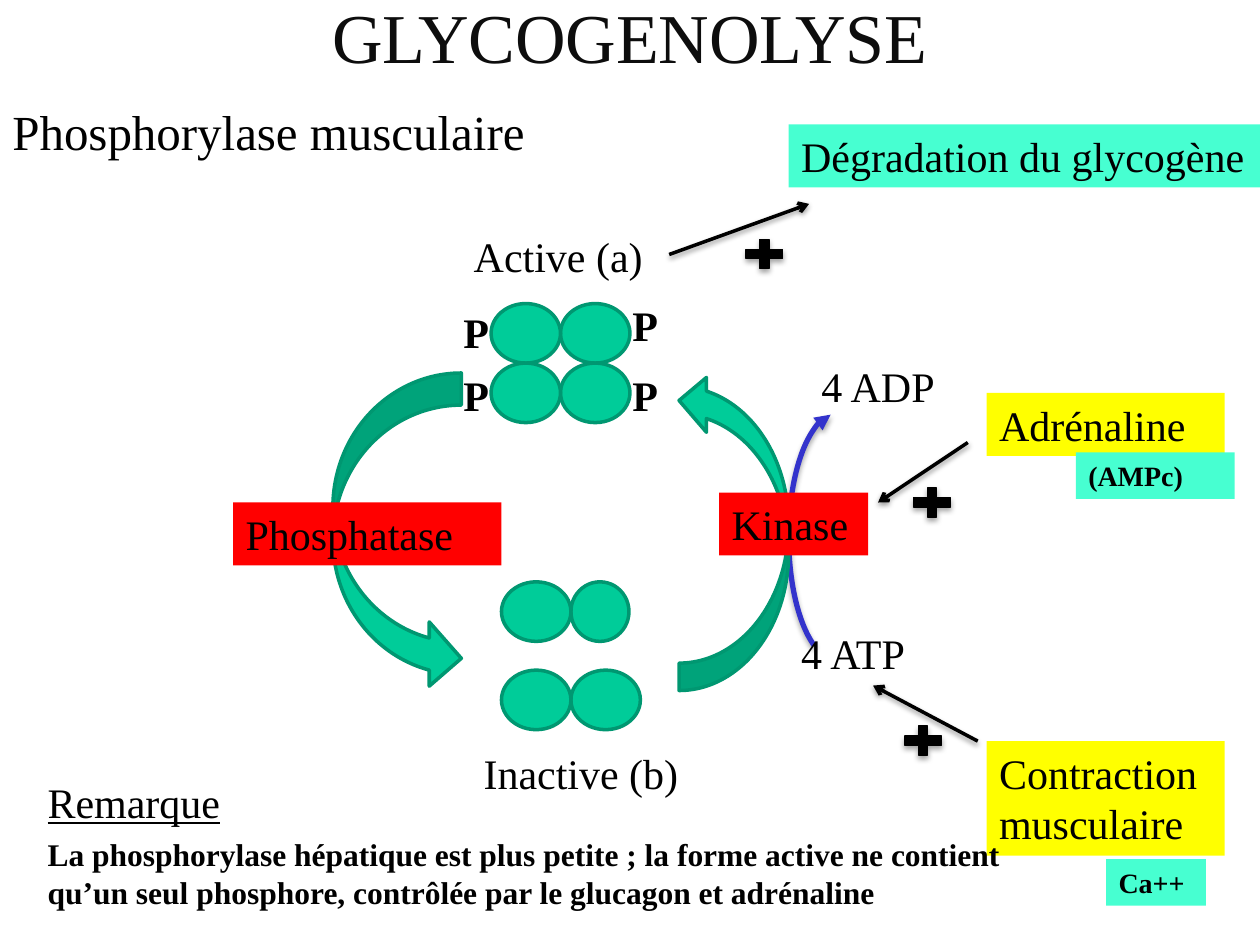
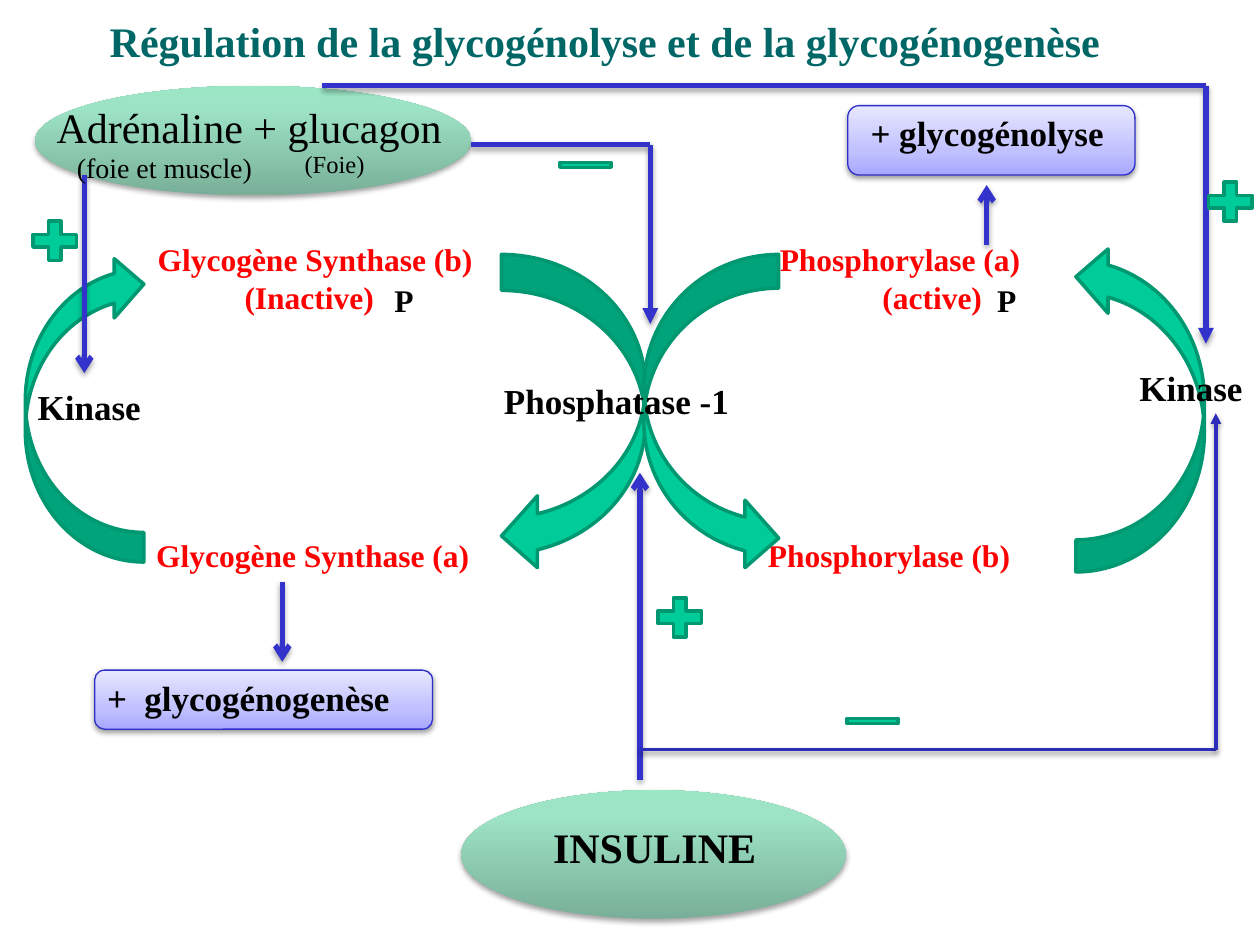
from dataclasses import dataclass
from typing import Optional

from lxml import etree
from pptx import Presentation
from pptx.dml.color import RGBColor
from pptx.enum import shapes as sh, text as tx
from pptx.oxml.ns import qn
from pptx.util import Cm, Pt

FONT = "Times New Roman"
COLORS = {
    "black": "000000", "title": "0D0D0D", "teal": "006666", "red": "FF0000",
    "yellow": "FFFF00", "aqua": "47FFD1", "green": "00CC99", "dark_green": "009771",
    "blue": "3333CC", "navy": "2D2DB9", "box_line": "2E2ECB",
}
GRADIENTS = {
    "hormone": [(0, "79AF98"), (80, "9DE3C5"), (100, "9CE6C6")],
    "effect": [(0, "A7A7FF"), (35, "C1C1FF"), (100, "E7E7FF")],
}
KIND = sh.MSO_SHAPE


@dataclass(frozen=True)
class Shadow:
    alpha: int
    distance: float


STRONG = Shadow(35, 1.8)
SOFT = Shadow(38, 1.6)


@dataclass(frozen=True)
class Box:
    """Left, top, width and height in centimetres."""
    x: float
    y: float
    w: float
    h: float

    def emu(self) -> tuple:
        return Cm(self.x), Cm(self.y), Cm(self.w), Cm(self.h)


@dataclass(frozen=True)
class Label:
    text: str
    box: Box
    size: int = 24
    bold: bool = False
    fill: Optional[str] = None
    underline: bool = False


@dataclass(frozen=True)
class Route:
    """A path of straight segments, with an arrowhead at its last point."""
    points: tuple
    head: str = "arrow"
    color: str = "blue"
    width: float = 3
    shadow: Shadow = STRONG


@dataclass(frozen=True)
class Turn:
    """A curved arrow."""
    box: Box
    rotation: int = 0
    flip: str = ""


def rgb(name: str) -> RGBColor:
    return RGBColor.from_string(COLORS[name])


def xml(parent, tag: str, **attrs):
    return etree.SubElement(parent, qn(tag), {k: str(v) for k, v in attrs.items()})


def add_shadow(shape, shadow: Shadow) -> None:
    sp_pr = shape._element.spPr
    effects = sp_pr.find(qn("a:effectLst"))
    if effects is None:
        effects = xml(sp_pr, "a:effectLst")
    outer = xml(effects, "a:outerShdw", blurRad=Pt(3.1), dist=Pt(shadow.distance),
                dir=5400000, rotWithShape=0)
    color = xml(outer, "a:srgbClr", val=COLORS["black"])
    xml(color, "a:alpha", val=shadow.alpha * 1000)


def write(tf, *lines: str, size: int = 24, color: str = "black", bold: bool = False,
          underline: bool = False, align=None, tabs: tuple = ()) -> None:
    """Fill a text frame; tabs holds one tuple of tab stops (cm) per line."""
    tf.word_wrap = True
    for i, line in enumerate(lines):
        p = tf.paragraphs[0] if i == 0 else tf.add_paragraph()
        if tabs:
            stops = xml(p._p.get_or_add_pPr(), "a:tabLst")
            for stop in tabs[i]:
                xml(stops, "a:tab", pos=Cm(stop), algn="l")
        if align is not None:
            p.alignment = align
        r = p.add_run()
        r.text = line
        r.font.name = FONT
        r.font.size = Pt(size)
        r.font.bold = bold
        r.font.underline = underline
        r.font.color.rgb = rgb(color)


def add_text(s, box: Box, *lines: str, fill: Optional[str] = None, **fmt) -> None:
    sp = s.shapes.add_textbox(*box.emu())
    if fill:
        sp.fill.solid()
        sp.fill.fore_color.rgb = rgb(fill)
    write(sp.text_frame, *lines, **fmt)
    sp.text_frame.auto_size = tx.MSO_AUTO_SIZE.SHAPE_TO_FIT_TEXT


def add_labels(s, labels: list) -> None:
    for lb in labels:
        add_text(s, lb.box, lb.text, size=lb.size, bold=lb.bold, fill=lb.fill,
                 underline=lb.underline)


def add_title(s, box: Box, title: str, **fmt) -> None:
    sp = s.shapes.title
    sp.left, sp.top, sp.width, sp.height = box.emu()
    write(sp.text_frame, title, align=tx.PP_ALIGN.CENTER, **fmt)
    sp.text_frame.vertical_anchor = tx.MSO_ANCHOR.MIDDLE
    sp.text_frame.auto_size = tx.MSO_AUTO_SIZE.NONE


def add_shape(shapes, kind, box: Box, fill: Optional[str] = "green",
              line: Optional[str] = "dark_green", width: float = 2, flip: str = "",
              shadow: Optional[Shadow] = None):
    """Draw a preset shape; fill is a colour, a gradient name or None."""
    sp = shapes.add_shape(kind, *box.emu())
    if fill in GRADIENTS:
        sp.fill.gradient()
        sp.fill.gradient_angle = 90
        stops = sp._element.spPr.find(qn("a:gradFill")).find(qn("a:gsLst"))
        for stop in list(stops):
            stops.remove(stop)
        for pos, color in GRADIENTS[fill]:
            xml(xml(stops, "a:gs", pos=pos * 1000), "a:srgbClr", val=color)
    elif fill:
        sp.fill.solid()
        sp.fill.fore_color.rgb = rgb(fill)
    else:
        sp.fill.background()
    if line:
        sp.line.color.rgb = rgb(line)
        sp.line.width = Pt(width)
    else:
        sp.line.fill.background()
    if flip:
        sp._element.spPr.find(qn("a:xfrm")).set(flip, "1")
    sp.shadow.inherit = False
    if shadow:
        add_shadow(sp, shadow)
    return sp


def add_turn(shapes, turn: Turn) -> None:
    sp = add_shape(shapes, KIND.CURVED_LEFT_ARROW, turn.box, flip=turn.flip)
    sp.rotation = turn.rotation


def add_route(s, route: Route) -> None:
    ends = list(zip(route.points, route.points[1:]))
    for i, (start, end) in enumerate(ends):
        c = s.shapes.add_connector(sh.MSO_CONNECTOR.STRAIGHT, *map(Cm, start + end))
        c.line.color.rgb = rgb(route.color)
        c.line.width = Pt(route.width)
        if i == len(ends) - 1:
            xml(c.line._get_or_add_ln(), "a:tailEnd", type=route.head)
        add_shadow(c, route.shadow)


def add_subunits(s, x: float, rows: list, last_width: float = 1.4) -> None:
    """Group pairs of touching ovals, one pair per row."""
    group = s.shapes.add_group_shape()
    for y in rows:
        for left, w in ((x + 1.4, last_width), (x, 1.4)):
            add_shape(group.shapes, KIND.OVAL, Box(left, y, w, 1.2))


def muscle_phosphorylase(prs) -> None:
    s = prs.slides.add_slide(prs.slide_layouts[5])
    arc = add_shape(s.shapes, KIND.ARC, Box(15.9, 8.33, 2, 5), fill=None, line="blue",
                    width=3, flip="flipH", shadow=STRONG)
    arc.adjustments[0], arc.adjustments[1] = 164.15, 46.46
    xml(arc.line._get_or_add_ln(), "a:headEnd", type="triangle")
    add_title(s, Box(1.9, 0, 21.6, 1.42), "GLYCOGENOLYSE", size=40, color="title")
    add_text(s, Box(0, 1.93, 13.41, 1.45), "Phosphorylase musculaire", size=28)

    add_subunits(s, 9.9, [6.12, 7.32])
    add_subunits(s, 10.11, [13.51])
    add_subunits(s, 10.11, [11.73], last_width=1.17)
    add_turn(s.shapes, Turn(Box(13.69, 7.52, 2.21, 6.4), 180, "flipH"))
    add_turn(s.shapes, Turn(Box(6.71, 7.52, 2.59, 6.4), 180, "flipV"))

    for x, y in ((12.5, 5.92), (12.5, 7.32), (9.09, 7.32), (9.09, 6.05)):
        add_text(s, Box(x, y, 1, 1.27), "P", bold=True)
    add_labels(s, [
        Label("Kinase", Box(14.5, 9.93, 3, 1.27), fill="red"),
        Label("Phosphatase", Box(4.7, 10.13, 5.41, 1.27), fill="red"),
        Label("Active (a)", Box(9.3, 4.52, 5.41, 1.27)),
        Label("Inactive (b)", Box(9.5, 14.94, 4.8, 1.27)),
        Label("4 ATP", Box(15.9, 12.52, 3.4, 1.27)),
        Label("4 ADP", Box(16.31, 7.14, 4.19, 1.27)),
        Label("Adrénaline", Box(19.89, 7.92, 4.8, 1.27), fill="yellow"),
        Label("Contraction musculaire", Box(19.89, 14.94, 4.8, 2.31), fill="yellow"),
        Label("Dégradation du glycogène", Box(15.9, 2.51, 9.5, 1.27), fill="aqua"),
        Label("La phosphorylase hépatique est plus petite ; la forme active ne contient "
              "qu’un seul phosphore, contrôlée par le glucagon et adrénaline",
              Box(0.71, 16.71, 20.19, 1.8), 18, True),
        Label("Remarque", Box(0.71, 15.52, 7.39, 1.27), underline=True),
        Label("(AMPc)", Box(21.69, 9.12, 3.2, 0.94), 16, True, "aqua"),
        Label("Ca++", Box(22.3, 17.32, 2.01, 0.94), 16, True, "aqua"),
    ])
    for points in (((19.51, 8.92), (17.7, 10.13)), ((19.71, 14.94), (17.6, 13.82)),
                   ((13.49, 5.13), (16.31, 4.11))):
        add_route(s, Route(points, color="black", width=2, shadow=SOFT))
    for x, y in ((18.11, 14.53), (18.29, 9.73), (14.91, 4.72)):
        add_shape(s.shapes, KIND.MATH_PLUS, Box(x, y, 1, 0.8), "black", "black", 0.75,
                  shadow=STRONG)


def regulation(prs) -> None:
    s = prs.slides.add_slide(prs.slide_layouts[5])
    for box in (Box(0.71, 1.73, 8.79, 2.21), Box(9.3, 15.93, 7.75, 2.59)):
        add_shape(s.shapes, KIND.OVAL, box, "hormone", None, shadow=STRONG)
    for box in (Box(1.91, 13.51, 6.81, 1.19), Box(17.09, 2.13, 5.79, 1.4)):
        add_shape(s.shapes, KIND.FLOWCHART_ALTERNATE_PROCESS, box, "effect", "box_line",
                  0.75, shadow=SOFT)
    add_title(s, Box(1.4, -0.28, 21.59, 2.21),
              "Régulation de la glycogénolyse et de la glycogénogenèse",
              color="teal", bold=True)

    enzyme = dict(size=18, color="red", bold=True)
    add_text(s, Box(2.31, 4.72, 22.61, 1.8),
             "\tGlycogène Synthase (b)\tPhosphorylase (a)", "\t(Inactive)\t(active)",
             tabs=((0.62, 13.16), (2.37, 15.23)), **enzyme)
    add_text(s, Box(1.3, 10.69, 20.75, 1.02),
             "\tGlycogène Synthase (a)\tPhosphorylase (b)", tabs=((1.6, 13.93),), **enzyme)

    phosphatase = s.shapes.add_group_shape()
    add_turn(phosphatase.shapes, Turn(Box(10.11, 5.13, 2.9, 6.4)))
    add_turn(phosphatase.shapes, Turn(Box(12.98, 5.13, 2.72, 6.4), flip="flipH"))
    add_turn(s.shapes, Turn(Box(0.51, 5.13, 2.39, 6.2), 180))
    add_turn(s.shapes, Turn(Box(21.69, 4.93, 2.59, 6.6), 180, "flipH"))

    for route in (
        Route(((19.89, 4.93), (19.89, 3.73))),
        Route(((5.69, 11.73), (5.69, 13.34))),
        Route(((12.9, 15.72), (12.9, 9.53))),
        Route(((12.9, 15.11), (24.51, 15.11), (24.51, 8.33)), "triangle", "navy", 2, SOFT),
        Route(((1.7, 3.53), (1.7, 7.52))),
        Route(((9.5, 2.92), (13.11, 2.92), (13.11, 6.53)), "triangle"),
        Route(((6.5, 1.73), (24.31, 1.73), (24.31, 6.93)), "triangle"),
    ):
        add_route(s, route)
    for x, y in ((13.11, 11.91), (0.51, 4.32), (24.21, 3.53)):
        add_shape(s.shapes, KIND.MATH_PLUS, Box(x, y, 1.19, 1.07), flip="flipV")
    for x, y in ((16.89, 14.33), (11.1, 3.12)):
        add_shape(s.shapes, KIND.MATH_MINUS, Box(x, y, 1.4, 0.41))

    add_text(s, Box(1.91, 13.51, 8.79, 1.12), "+\tglycogénogenèse", size=20, bold=True,
             tabs=((0.75,),))
    add_labels(s, [
        Label("Phosphatase -1", Box(9.91, 7.52, 5.41, 1.12), 20, True),
        Label("Kinase", Box(22.72, 7.26, 2.68, 1.12), 20, True),
        Label("Kinase", Box(0.51, 7.64, 3.2, 1.12), 20, True),
        Label("+ glycogénolyse", Box(17.3, 2.13, 8.1, 1.12), 20, True),
        Label("P", Box(19.85, 5.54, 1.19, 1.02), 18, True),
        Label("P", Box(7.7, 5.54, 1.19, 1.02), 18, True),
        Label("INSULINE", Box(10.9, 16.43, 5.99, 1.27), bold=True),
        Label("Adrénaline + glucagon", Box(0.89, 1.93, 8.61, 1.27)),
        Label("(foie et muscle)", Box(1.3, 2.92, 6.2, 0.94), 16),
        Label("(Foie)", Box(5.89, 2.87, 3.81, 0.86), 14),
    ])


def main() -> None:
    prs = Presentation()
    prs.slide_width, prs.slide_height = Cm(25.4), Cm(19.05)
    muscle_phosphorylase(prs)
    regulation(prs)
    prs.save("out.pptx")


if __name__ == "__main__":
    main()
